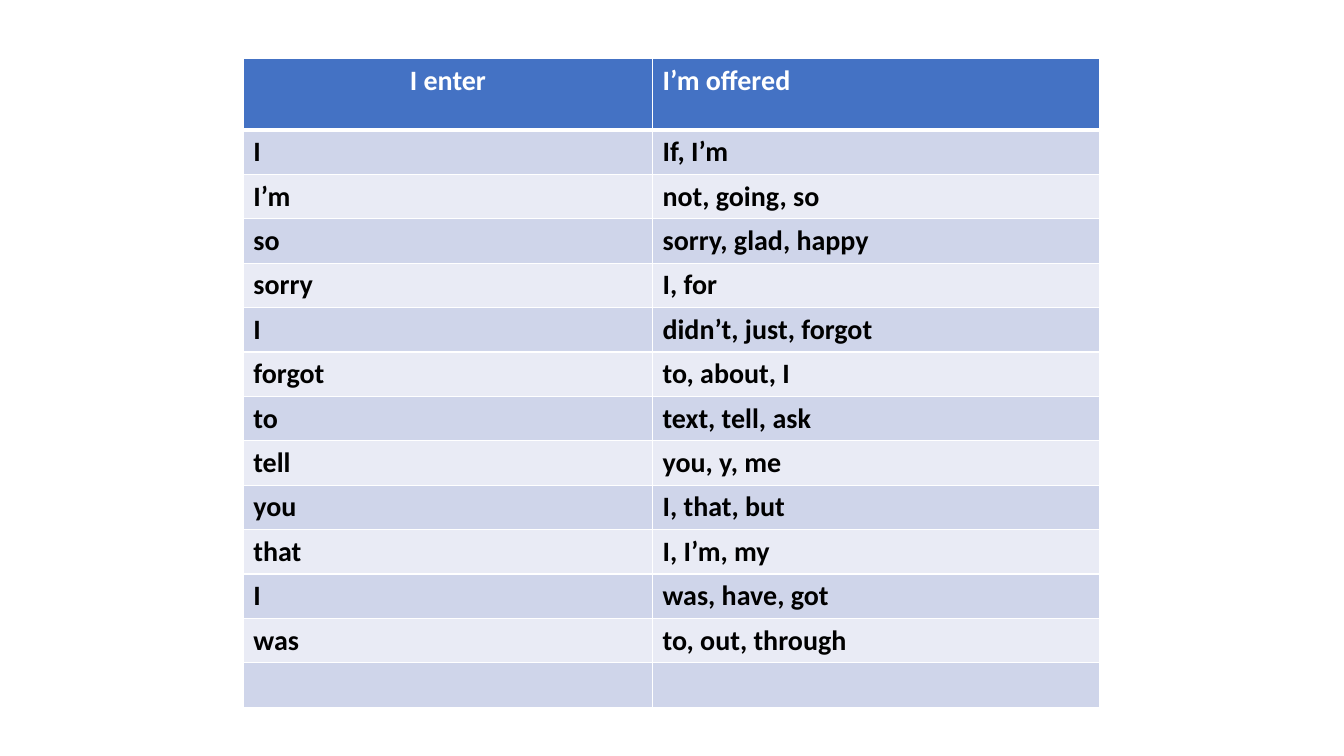
from lxml.etree import SubElement
from pptx import Presentation
from pptx.dml.color import RGBColor
from pptx.enum.text import PP_ALIGN
from pptx.oxml.ns import qn
from pptx.util import Pt

COLORS = {
    "header": "4472C4",
    "band_dark": "CFD5EA",
    "band_light": "E9EBF5",
    "border": "FFFFFF",
    "header_text": "FFFFFF",
    "text": "000000",
}

HEADER = ("I enter", "I’m offered")
SUGGESTIONS = [
    ("I", "If, I’m"),
    ("I’m", "not, going, so"),
    ("so", "sorry, glad, happy"),
    ("sorry", "I, for"),
    ("I", "didn’t, just, forgot"),
    ("forgot", "to, about, I"),
    ("to", "text, tell, ask"),
    ("tell", "you, y, me"),
    ("you", "I, that, but"),
    ("that", "I, I’m, my"),
    ("I", "was, have, got"),
    ("was", "to, out, through"),
    ("", ""),
]


def write(tf, text, color="text", size=20, font="Calibri", bold=True, align=PP_ALIGN.LEFT):
    p = tf.paragraphs[0]
    p.alignment = align
    if not text:
        return
    r = p.add_run()
    r.text = text
    r.font.name, r.font.size, r.font.bold = font, Pt(size), bold
    r.font.color.rgb = RGBColor.from_string(COLORS[color])


class SlideBuilder:
    def __init__(self, slide, border=1, header_border=3):
        self.slide = slide
        self.border = border
        self.header_border = header_border

    def borders(self, cell, top, bottom):
        tc_pr = cell._tc.get_or_add_tcPr()
        widths = {"lnL": self.border, "lnR": self.border, "lnT": top, "lnB": bottom}
        for side, width in widths.items():
            ln = SubElement(tc_pr, qn(f"a:{side}"), w=str(Pt(width)))
            fill = SubElement(ln, qn("a:solidFill"))
            SubElement(fill, qn("a:srgbClr"), val=COLORS["border"])

    def cell(self, cell, text, fill, top, bottom, **fmt):
        self.borders(cell, top, bottom)
        cell.fill.solid()
        cell.fill.fore_color.rgb = RGBColor.from_string(COLORS[fill])
        write(cell.text_frame, text, **fmt)

    def table(self, left, top, col_widths, header_height, row_height, header, rows):
        heights = [header_height] + [row_height] * len(rows)
        table = self.slide.shapes.add_table(
            len(heights), len(col_widths), Pt(left), Pt(top),
            Pt(sum(col_widths)), Pt(sum(heights))).table
        for col, width in zip(table.columns, col_widths):
            col.width = Pt(width)
        for row, height in zip(table.rows, heights):
            row.height = Pt(height)

        # Header row: first heading centred, thick rule below
        for c, text in enumerate(header):
            self.cell(table.cell(0, c), text, "header", self.border, self.header_border,
                      color="header_text", align=PP_ALIGN.LEFT if c else PP_ALIGN.CENTER)

        # Banded body rows
        for i, row in enumerate(rows, start=1):
            fill = "band_dark" if i % 2 else "band_light"
            above = self.header_border if i == 1 else self.border
            for c, text in enumerate(row):
                self.cell(table.cell(i, c), text, fill, above, self.border)


def main():
    prs = Presentation()
    prs.slide_width, prs.slide_height = Pt(960), Pt(540)
    builder = SlideBuilder(prs.slides.add_slide(prs.slide_layouts[6]))

    # Table of typed words and the suggestions offered
    builder.table(left=173.8, top=41.8, col_widths=[292.3, 319.7], header_height=51,
                  row_height=31.7, header=HEADER, rows=SUGGESTIONS)
    prs.save("out.pptx")


if __name__ == "__main__":
    main()
